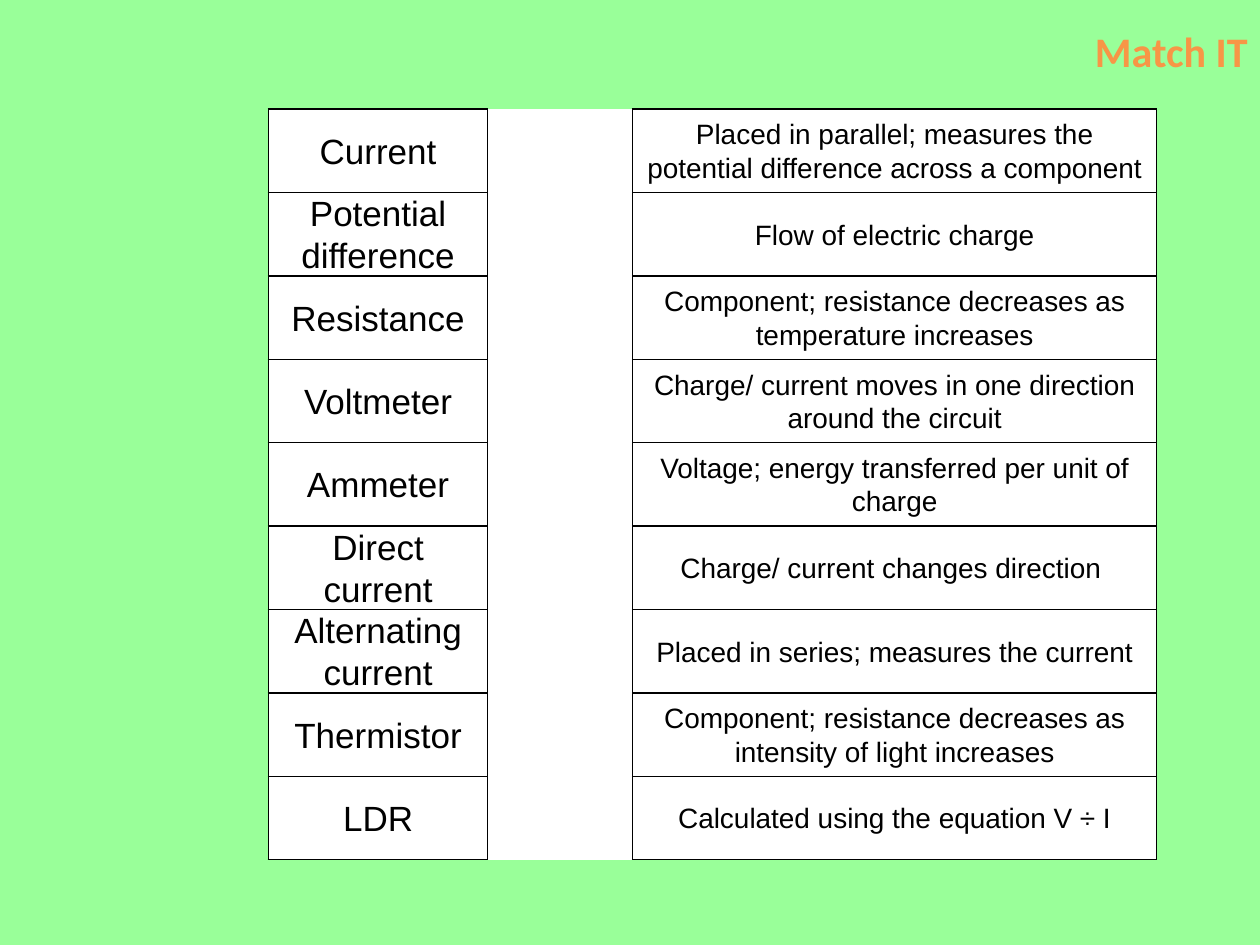
import pptx
import pptx.util
import pptx.dml.color
import pptx.enum.text
import pptx.oxml
import pptx.oxml.ns

Pt = pptx.util.Pt
ALIGN = pptx.enum.text.PP_ALIGN
MIDDLE = pptx.enum.text.MSO_ANCHOR.MIDDLE

TITLE = "Match IT"
PAIRS = [
    ("Current", "Placed in parallel; measures the potential difference across a component"),
    ("Potential difference", "Flow of electric charge"),
    ("Resistance", "Component; resistance decreases as temperature increases"),
    ("Voltmeter", "Charge/ current moves in one direction around the circuit"),
    ("Ammeter", "Voltage; energy transferred per unit of charge"),
    ("Direct current", "Charge/ current changes direction "),
    ("Alternating current", "Placed in series; measures the current"),
    ("Thermistor", "Component; resistance decreases as intensity of light increases"),
    ("LDR", "Calculated using the equation V ÷ I"),
]
COLORS = {"background": "99FF99", "title": "F79646", "cell": "FFFFFF", "ink": "000000"}
COL_WIDTHS = [125.3, 82.8, 299.5]
ROW_HEIGHT = 47.6
TABLE_LEFT, TABLE_TOP = 153.4, 62.4
TERM_SIZE, MEANING_SIZE = 20, 16


def rgb(name):
    return pptx.dml.color.RGBColor.from_string(COLORS[name])


def add_run(p, text, font, size, color, bold=False):
    r = p.add_run()
    r.text = text
    r.font.name = font
    r.font.size = Pt(size)
    r.font.bold = bold
    r.font.color.rgb = rgb(color)


def style_cell(cell, sides):
    """Draw 1 pt borders on the given sides, none on the others, and fill the cell."""
    tc_pr = cell._tc.get_or_add_tcPr()
    for side in "LRTB":
        if side in sides:
            line = f'<a:solidFill><a:srgbClr val="{COLORS["ink"]}"/></a:solidFill>'
        else:
            line = "<a:noFill/>"
        ns = pptx.oxml.ns.nsdecls("a")
        tc_pr.append(pptx.oxml.parse_xml(f'<a:ln{side} {ns} w="{Pt(1)}">{line}</a:ln{side}>'))
    cell.fill.solid()
    cell.fill.fore_color.rgb = rgb("cell")


def write_cell(cell, text, size):
    cell.vertical_anchor = MIDDLE
    cell.margin_left = cell.margin_right = Pt(5)
    cell.margin_top = cell.margin_bottom = 0
    p = cell.text_frame.paragraphs[0]
    p.alignment = ALIGN.CENTER
    p.line_spacing = 1.07
    add_run(p, text, "Arial", size, "ink")


def add_matching_table(s):
    n = len(PAIRS)
    table = s.shapes.add_table(n, len(COL_WIDTHS), Pt(TABLE_LEFT), Pt(TABLE_TOP),
                               Pt(sum(COL_WIDTHS)), Pt(n * ROW_HEIGHT)).table
    table.first_row = table.horz_banding = False
    for column, width in zip(table.columns, COL_WIDTHS):
        column.width = Pt(width)
    for i, (term, meaning) in enumerate(PAIRS):
        table.rows[i].height = Pt(ROW_HEIGHT)
        for j, sides in enumerate(("LRTB", "LR", "LRTB")):
            style_cell(table.cell(i, j), sides)
        write_cell(table.cell(i, 0), term, TERM_SIZE)
        write_cell(table.cell(i, 2), meaning, MEANING_SIZE)
    table.cell(0, 1).merge(table.cell(n - 1, 1))


def add_title(s):
    tf = s.shapes.add_textbox(Pt(127.4), Pt(3), Pt(592.6), Pt(52)).text_frame
    tf.word_wrap = True
    tf.vertical_anchor = MIDDLE
    p = tf.paragraphs[0]
    p.alignment = ALIGN.RIGHT
    add_run(p, TITLE, "Calibri", 24, "title", bold=True)


def main():
    prs = pptx.Presentation()
    prs.slide_width, prs.slide_height = Pt(720), Pt(540)
    s = prs.slides.add_slide(prs.slide_layouts[6])
    s.background.fill.solid()
    s.background.fill.fore_color.rgb = rgb("background")
    add_matching_table(s)
    add_title(s)
    prs.save("out.pptx")


if __name__ == "__main__":
    main()
